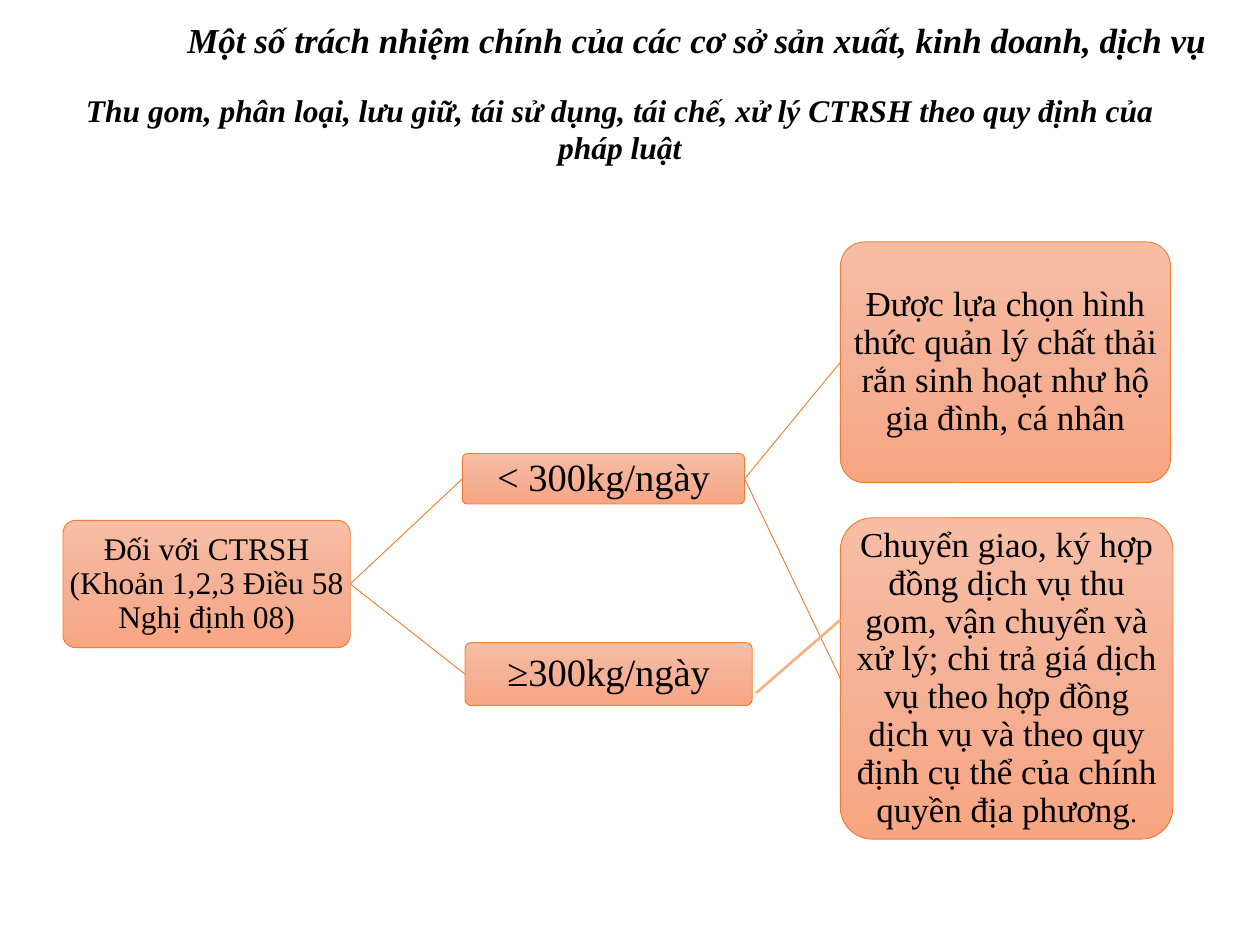
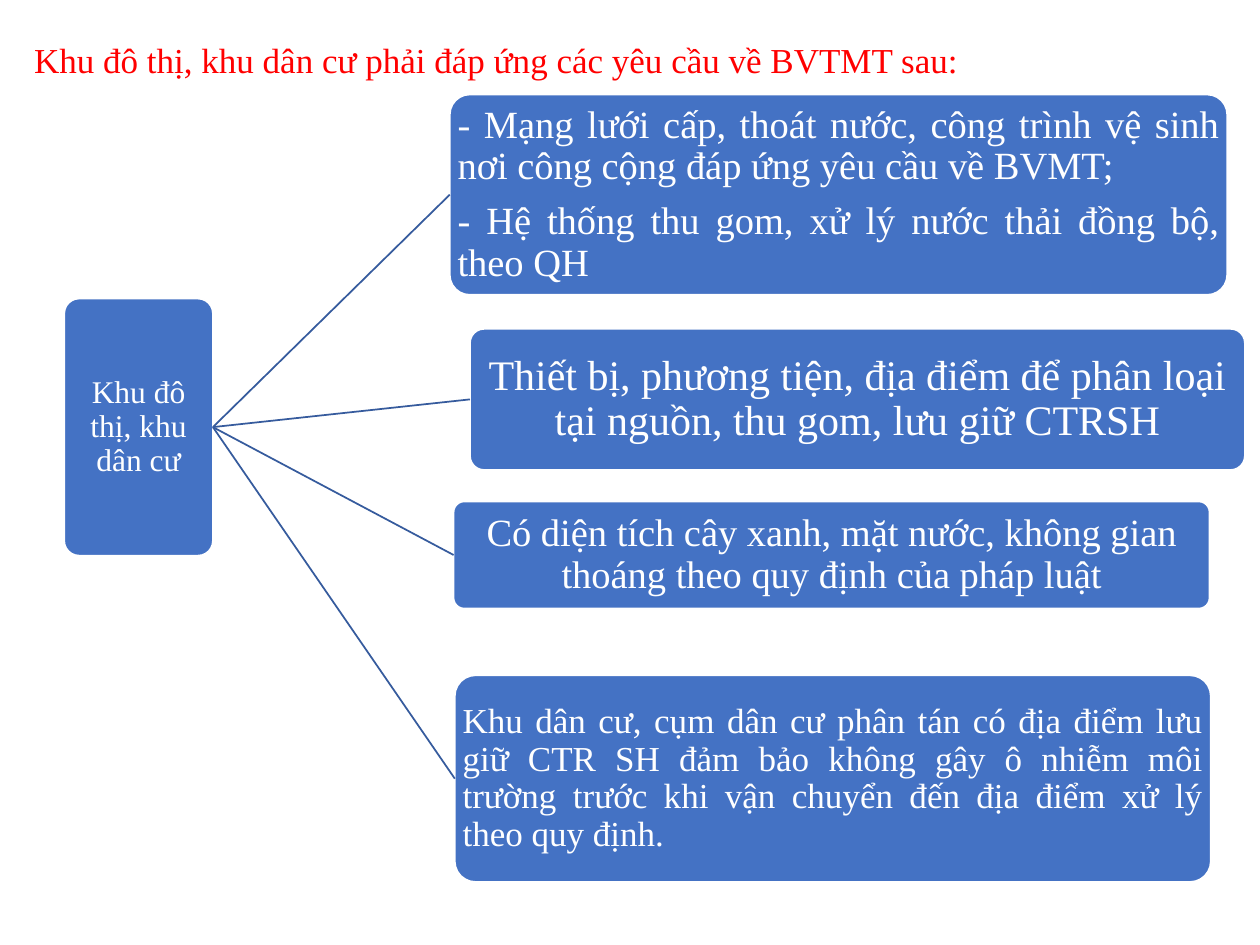
from copy import deepcopy

from lxml import etree
from pptx import Presentation
from pptx.dml.color import RGBColor
from pptx.enum.shapes import MSO_CONNECTOR, MSO_SHAPE
from pptx.enum.text import MSO_ANCHOR, MSO_AUTO_SIZE, PP_ALIGN
from pptx.oxml.ns import qn
from pptx.util import Inches, Pt

STRAIGHT = MSO_CONNECTOR.STRAIGHT
ROUNDED = MSO_SHAPE.ROUNDED_RECTANGLE
MIDDLE = MSO_ANCHOR.MIDDLE
NO_AUTOFIT = MSO_AUTO_SIZE.NONE
LEFT, CENTER = PP_ALIGN.LEFT, PP_ALIGN.CENTER
RIGHT, JUSTIFY = PP_ALIGN.RIGHT, PP_ALIGN.JUSTIFY

FONT = "Times New Roman"
BLACK, WHITE, RED = "000000", "FFFFFF", "FF0000"
LEFT_SITE, RIGHT_SITE = 1, 3

ORANGE_THEME = {"fill": ["F7BDA5", "F5B196", "F8A582"], "outline": ("ED7D31", 0.5),
                "link": ("ED7D31", 0.5), "text": BLACK}
BLUE_THEME = {"fill": ["4472C4"], "outline": (WHITE, 1),
              "link": ("365B9D", 1), "text": WHITE}

SUBTITLE = "Thu gom, phân loại, lưu giữ, tái sử dụng, tái chế, xử lý CTRSH theo quy định của pháp luật"
SUBTITLE_AREA = (0.42, 0.67, 9, 0.71)
EXTRA_LINK = ((6, 5.5), (6.67, 4.92), ("F4B183", 1.5))

DUTIES = {
    "title": "Một số trách nhiệm chính của các cơ sở sản xuất, kinh doanh, dịch vụ",
    "title_area": (0.75, 0.15, 8.93, 0.37),
    "title_style": {"align": RIGHT, "color": BLACK, "bold": True, "italic": True},
    "theme": ORANGE_THEME,
    "nodes": {
        "root": ((0.5, 4.13, 2.28, 1.01), 18, CENTER,
                 ["Đối với CTRSH (Khoản 1,2,3 Điều 58 Nghị định 08)"]),
        "under": ((3.67, 3.6, 2.24, 0.4), 22, CENTER, ["< 300kg/ngày"]),
        "choice": ((6.67, 1.92, 2.62, 1.91), 20, CENTER,
                   ["Được lựa chọn hình thức quản lý chất thải rắn sinh hoạt như hộ gia đình, cá nhân"]),
        "transfer": ((6.67, 4.11, 2.64, 2.55), 20, CENTER,
                     ["Chuyển giao, ký hợp đồng dịch vụ thu gom, vận chuyển và xử lý; chi trả giá "
                      "dịch vụ theo hợp đồng dịch vụ và theo quy định cụ thể của chính quyền địa phương"]),
        "over": ((3.69, 5.1, 2.28, 0.5), 22, CENTER, ["≥300kg/ngày"]),
    },
    "links": [("root", "under"), ("under", "choice"), ("under", "transfer"), ("root", "over")],
}

REQUIREMENTS = {
    "title": "Khu đô thị, khu dân cư phải đáp ứng các yêu cầu về BVTMT sau:",
    "title_area": (0.17, 0.15, 9.58, 0.68),
    "title_style": {"align": LEFT, "color": RED},
    "theme": BLUE_THEME,
    "nodes": {
        "area": ((0.51, 2.37, 1.18, 2.04), 18, CENTER, ["Khu đô thị, khu dân cư"]),
        "water": ((3.57, 0.75, 6.17, 1.59), 22, JUSTIFY,
                  ["- Mạng lưới cấp, thoát nước, công trình vệ sinh nơi công cộng đáp ứng yêu cầu về BVMT;",
                   "- Hệ thống thu gom, xử lý nước thải đồng bộ, theo QH"]),
        "sorting": ((3.73, 2.61, 6.15, 1.12), 24, CENTER,
                    ["Thiết bị, phương tiện, địa điểm để phân loại tại nguồn, thu gom, lưu giữ CTRSH"]),
        "green": ((3.6, 3.98, 6, 0.85), 22, CENTER,
                  ["Có diện tích cây xanh, mặt nước, không gian thoáng theo quy định của pháp luật"]),
        "storage": ((3.61, 5.36, 6, 1.64), 20, JUSTIFY,
                    ["Khu dân cư, cụm dân cư phân tán có địa điểm lưu giữ CTR SH đảm bảo không gây ô nhiễm "
                     "môi trường trước khi vận chuyển đến địa điểm xử lý theo quy định."]),
    },
    "links": [("area", "water"), ("area", "sorting"), ("area", "green"), ("area", "storage")],
}


def rgb(color):
    return RGBColor.from_string(color)


def style_run(run, size, color, bold=False, italic=False):
    run.font.name = FONT
    run.font.size = Pt(size)
    run.font.color.rgb = rgb(color)
    run.font.bold = bold
    run.font.italic = italic


def write(frame, paragraphs, size, align, color, spacing=0.9, gap=0, **emphasis):
    frame.word_wrap = True
    frame.text = "\n".join(paragraphs)
    for paragraph in frame.paragraphs:
        paragraph.alignment = align
        paragraph.line_spacing = spacing
        paragraph.space_before = Pt(0)
        paragraph.space_after = Pt(gap)
        for run in paragraph.runs:
            style_run(run, size, color, **emphasis)


def set_line(line, stroke):
    color, width = stroke
    line.color.rgb = rgb(color)
    line.width = Pt(width)


def fill_node(node, colors):
    fill = node.fill
    if len(colors) == 1:
        fill.solid()
        fill.fore_color.rgb = rgb(colors[0])
        return
    fill.gradient()
    fill.gradient_angle = 270
    stop_list = node._element.spPr.find(qn("a:gradFill")).find(qn("a:gsLst"))
    while len(stop_list) < len(colors):
        stop_list.append(deepcopy(stop_list[0]))
    for index, (stop, color) in enumerate(zip(fill.gradient_stops, colors)):
        stop.color.rgb = rgb(color)
        stop.position = index / (len(colors) - 1)


def add_node(slide, theme, area, size, align, paragraphs):
    node = slide.shapes.add_shape(ROUNDED, *map(Inches, area))
    node.adjustments[0] = 0.1
    node.shadow.inherit = False
    fill_node(node, theme["fill"])
    set_line(node.line, theme["outline"])
    frame = node.text_frame
    frame.vertical_anchor = MIDDLE
    inset = Pt(size * 0.05)
    frame.margin_left = frame.margin_right = inset
    frame.margin_top = frame.margin_bottom = inset
    write(frame, paragraphs, size, align, theme["text"])
    for paragraph in frame.paragraphs[:-1]:
        paragraph.space_after = Pt(size * 0.35)
    return node


def add_link(slide, start, end, stroke):
    link = slide.shapes.add_connector(STRAIGHT, *map(Inches, start + end))
    set_line(link.line, stroke)
    etree.SubElement(link._element.spPr, qn("a:effectLst"))
    return link


def add_diagram(deck, content):
    slide = deck.slides.add_slide(deck.slide_layouts[5])
    title = slide.shapes.title
    title.left, title.top, title.width, title.height = map(Inches, content["title_area"])
    title.text_frame.vertical_anchor = MIDDLE
    title.text_frame.auto_size = NO_AUTOFIT
    write(title.text_frame, [content["title"]], 20, **content["title_style"])

    theme = content["theme"]
    nodes = {key: add_node(slide, theme, *node) for key, node in content["nodes"].items()}
    for parent, child in content["links"]:
        link = add_link(slide, (0, 0), (1, 1), theme["link"])
        link.begin_connect(nodes[parent], RIGHT_SITE)
        link.end_connect(nodes[child], LEFT_SITE)
    return slide, nodes


def main():
    deck = Presentation()
    deck.slide_width, deck.slide_height = Inches(10), Inches(7.5)

    slide, nodes = add_diagram(deck, DUTIES)
    full_stop = nodes["transfer"].text_frame.paragraphs[0].add_run()
    full_stop.text = "."
    style_run(full_stop, 16, BLACK)
    subtitle = slide.shapes.add_textbox(*map(Inches, SUBTITLE_AREA))
    write(subtitle.text_frame, [SUBTITLE], 18, CENTER, BLACK, spacing=1, bold=True, italic=True)
    add_link(slide, *EXTRA_LINK)

    add_diagram(deck, REQUIREMENTS)
    deck.save("out.pptx")


if __name__ == "__main__":
    main()
